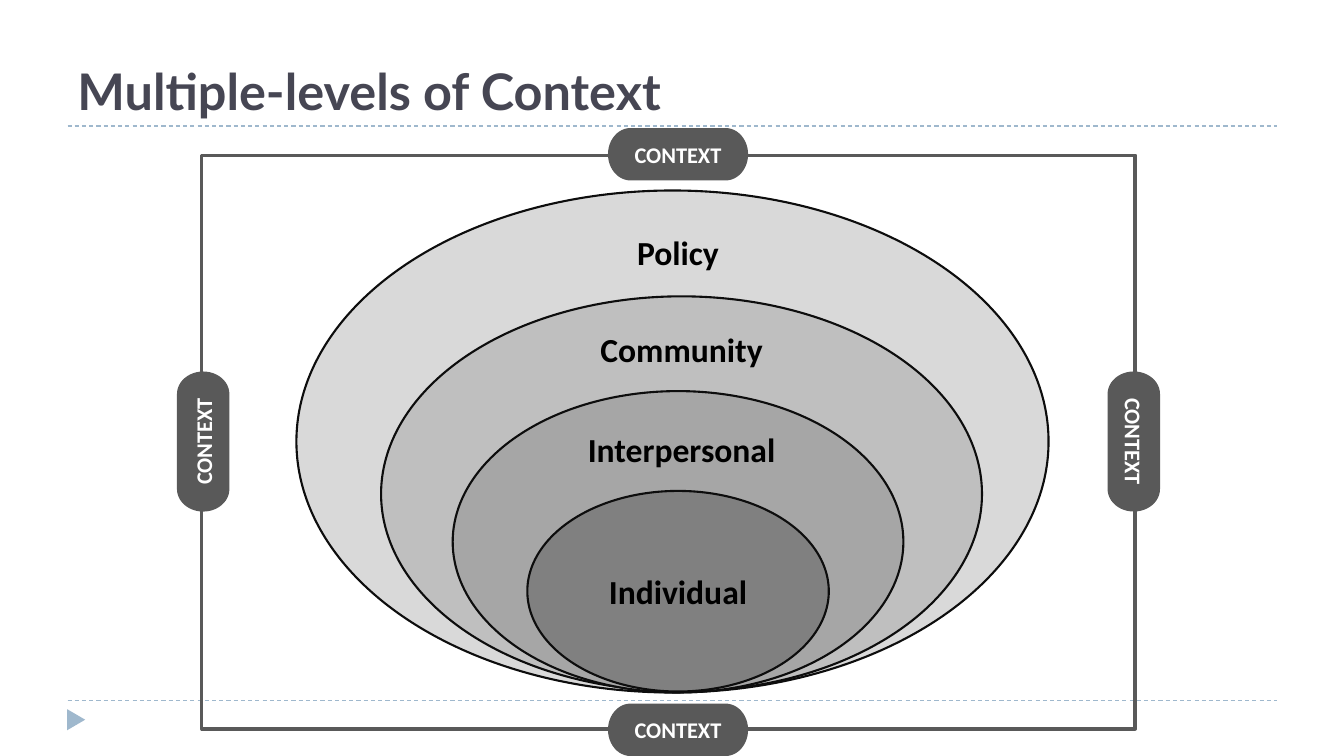
"""Build a slide of nested ellipses showing the levels of context."""
from dataclasses import dataclass

from lxml import etree
from pptx import Presentation
from pptx.dml.color import RGBColor
from pptx.enum.dml import MSO_LINE
from pptx.enum.shapes import MSO_CONNECTOR, MSO_SHAPE
from pptx.enum.text import MSO_ANCHOR, PP_ALIGN
from pptx.oxml.ns import qn
from pptx.util import Inches, Pt

STRAIGHT = MSO_CONNECTOR.STRAIGHT
DASH = MSO_LINE.DASH
OVAL = MSO_SHAPE.OVAL
RECTANGLE = MSO_SHAPE.RECTANGLE
TERMINATOR = MSO_SHAPE.FLOWCHART_TERMINATOR
TRIANGLE = MSO_SHAPE.ISOSCELES_TRIANGLE
LEFT, CENTER = PP_ALIGN.LEFT, PP_ALIGN.CENTER
MIDDLE, BOTTOM = MSO_ANCHOR.MIDDLE, MSO_ANCHOR.BOTTOM


@dataclass(frozen=True)
class Theme:
    accent: RGBColor = RGBColor.from_string("9FB8CD")
    title: RGBColor = RGBColor.from_string("464653")
    frame: RGBColor = RGBColor.from_string("595959")
    outline: RGBColor = RGBColor.from_string("0D0D0D")
    black: RGBColor = RGBColor.from_string("000000")
    white: RGBColor = RGBColor.from_string("FFFFFF")
    levels: tuple = tuple(RGBColor.from_string(shade * 3) for shade in ("D9", "BF", "A6", "80"))
    title_font: str = "Lato"
    body_font: str = "Calibri"
    title_size: int = 36
    level_size: int = 24
    context_size: int = 16


theme = Theme()
deck = Presentation()
deck.slide_width, deck.slide_height = Inches(13.33), Inches(7.5)
page = deck.slides.add_slide(deck.slide_layouts[6])


def add_box(kind, bounds, fill=None, line=None, width=0):
    box = page.shapes.add_shape(kind, *map(Inches, bounds))
    box.shadow.inherit = False
    for part, color in ((box.fill, fill), (box.line.fill, line)):
        if color is None:
            part.background()
        else:
            part.solid()
            part.fore_color.rgb = color
    if line is not None:
        box.line.width = Pt(width)
    return box


def write(box, text, size, color, font=theme.body_font, align=CENTER, anchor=MIDDLE, wrap=True):
    frame = box.text_frame
    frame.word_wrap = wrap
    frame.vertical_anchor = anchor
    para = frame.paragraphs[0]
    para.alignment = align
    span = para.add_run()
    span.text = text
    for name, value in {"name": font, "size": Pt(size), "bold": True}.items():
        setattr(span.font, name, value)
    span.font.color.rgb = color


for rule_y in (6.95, 1.25):
    rule = page.shapes.add_connector(
        STRAIGHT, Inches(0.67), Inches(rule_y), Inches(12.67), Inches(rule_y))
    rule.line.color.rgb = theme.accent
    rule.line.width = Pt(0.75)
    rule.line.dash_style = DASH
    etree.SubElement(rule.element.spPr, qn("a:effectLst"))

marker = add_box(TRIANGLE, (0.65, 7.05, 0.21, 0.18), theme.accent)
marker.rotation = 90

level_bounds = (
    (2.94, 1.89, 7.46, 4.98),
    (3.78, 2.94, 5.96, 3.92),
    (4.49, 3.88, 4.47, 2.99),
    (5.23, 4.87, 2.99, 1.99),
)
for bounds, shade in zip(level_bounds, theme.levels):
    level = add_box(OVAL, bounds, shade, theme.outline, 1.5)
write(level, "Individual", theme.level_size, theme.black)

for text, left, top, width in (
    ("Interpersonal", 5.72, 4.21, 2.08),
    ("Community", 5.85, 3.21, 1.82),
    ("Policy", 6.21, 2.25, 1.03),
):
    label = page.shapes.add_textbox(Inches(left), Inches(top), Inches(width), Inches(0.5))
    write(label, text, theme.level_size, theme.black, anchor=MSO_ANCHOR.TOP, wrap=False)

title = page.shapes.add_textbox(Inches(0.67), Inches(0.25), Inches(12), Inches(1))
write(title, "Multiple-levels of Context", theme.title_size, theme.title,
      theme.title_font, LEFT, BOTTOM)

add_box(RECTANGLE, (2, 1.54, 9.26, 5.69), line=theme.frame, width=2.5)
for left, top, angle in ((6.03, 1.27, 0), (6.03, 6.98, 0), (1.32, 4.12, 270), (10.55, 4.12, 90)):
    context = add_box(TERMINATOR, (left, top, 1.39, 0.52), theme.frame)
    context.rotation = angle
    write(context, "CONTEXT", theme.context_size, theme.white)

deck.save("out.pptx")
